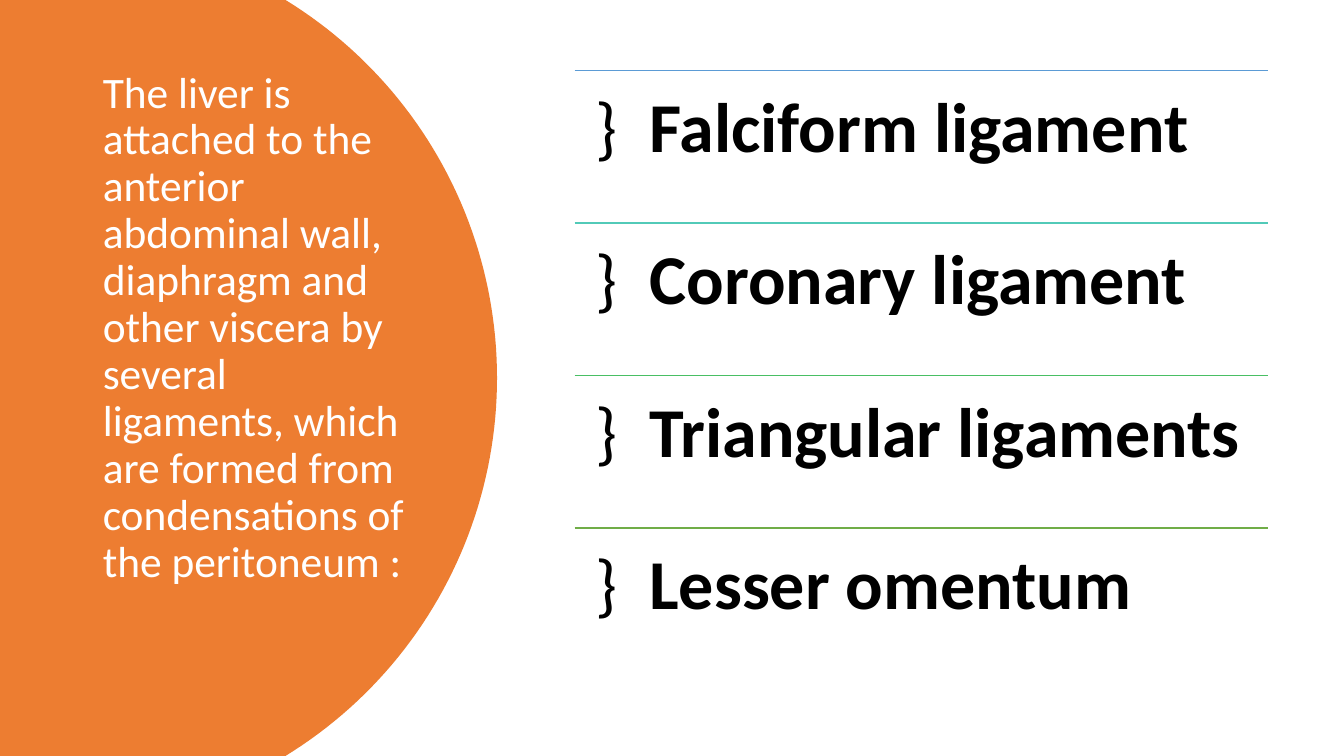
import dataclasses
import math

import lxml.etree
import pptx
import pptx.dml.color
import pptx.enum.shapes
import pptx.enum.text
import pptx.oxml.ns
import pptx.util

# Grid: 40 columns by 30 rows
WIDE, HIGH = pptx.util.Inches(13.33), pptx.util.Inches(7.5)
COLS, ROWS = 40, 30
LEFT, SPAN = 17.1, 20.64
TOP, STEP = 2.8, 6.05
PAD = pptx.util.Inches(0.21)


@dataclasses.dataclass
class Item:
    label: str
    tint: str


ITEMS = [
    Item("Falciform ligament", "5B9BD5"),
    Item("Coronary ligament", "52CAB8"),
    Item("Triangular ligaments", "49BF64"),
    Item("Lesser omentum", "70AD47"),
]


def col(count: float) -> int:
    return round(WIDE * count / COLS)


def row(count: float) -> int:
    return round(HIGH * count / ROWS)


def color(code: str) -> pptx.dml.color.RGBColor:
    return pptx.dml.color.RGBColor.from_string(code)


def apply(target, values: dict) -> None:
    for name, value in values.items():
        setattr(target, name, value)


def style(font, size: float, tint: str, bold: bool = False) -> None:
    apply(font, {"name": "Calibri", "size": pptx.util.Pt(size), "bold": bold})
    font.color.rgb = color(tint)


def draw_disc(slide) -> None:
    """Fill the left side up to an arc that bulges to the right."""
    mid, ray = pptx.util.Inches(0.53), pptx.util.Inches(4.4)
    half, parts = math.asin(HIGH / 2 / ray), 90
    turns = [half * (2 * n / parts - 1) for n in range(parts + 1)]
    arc = [(round(mid + ray * math.cos(t)), round(HIGH / 2 + ray * math.sin(t)))
           for t in turns]
    pen = slide.shapes.build_freeform(0, 0)
    pen.add_line_segments(arc + [(0, HIGH)], close=True)
    disc = pen.convert_to_shape()
    disc.shadow.inherit = False
    disc.fill.solid()
    disc.fill.fore_color.rgb = color("ED7D31")
    disc.line.fill.background()


def draw_title(slide, text: str) -> None:
    title = slide.shapes.title
    apply(title, {"left": col(2.76), "top": row(TOP),
                  "width": col(9.69), "height": row(24.36)})
    frame = title.text_frame
    apply(frame, {"text": text, "word_wrap": True, "margin_top": 0,
                  "auto_size": pptx.enum.text.MSO_AUTO_SIZE.NONE,
                  "vertical_anchor": pptx.enum.text.MSO_ANCHOR.TOP})
    para = frame.paragraphs[0]
    apply(para, {"alignment": pptx.enum.text.PP_ALIGN.LEFT, "line_spacing": 0.9})
    style(para.runs[0].font, 31, "FFFFFF")


def draw_item(slide, item: Item, top: float) -> None:
    # Rule above the label
    rule = slide.shapes.add_connector(
        pptx.enum.shapes.MSO_CONNECTOR.STRAIGHT,
        col(LEFT), row(top), col(LEFT + SPAN), row(top))
    rule.line.width = pptx.util.Pt(1)
    rule.line.color.rgb = color(item.tint)
    lxml.etree.SubElement(rule._element.spPr, pptx.oxml.ns.qn("a:effectLst"))

    # Brace and label
    box = slide.shapes.add_textbox(col(LEFT), row(top), col(SPAN), row(STEP))
    frame = box.text_frame
    apply(frame, {"word_wrap": True, "margin_left": PAD, "margin_right": PAD,
                  "margin_top": PAD, "margin_bottom": PAD})
    para = frame.paragraphs[0]
    para.line_spacing = 0.9
    for text, bold in (("}  ", False), (item.label, True)):
        run = para.add_run()
        run.text = text
        style(run.font, 50, "000000", bold)


def main() -> None:
    deck = pptx.Presentation()
    apply(deck, {"slide_width": WIDE, "slide_height": HIGH})
    slide = deck.slides.add_slide(deck.slide_layouts.get_by_name("Title Only"))

    # Left panel, with the title brought in front of it
    draw_disc(slide)
    draw_title(slide, "The liver is attached to the anterior abdominal wall, "
               "diaphragm and other viscera by several ligaments, which are "
               "formed from condensations of the peritoneum :")
    slide.shapes._spTree.append(slide.shapes.title._element)

    # List of ligaments
    for index, item in enumerate(ITEMS):
        draw_item(slide, item, TOP + index * STEP)
    deck.save("out.pptx")


if __name__ == "__main__":
    main()
